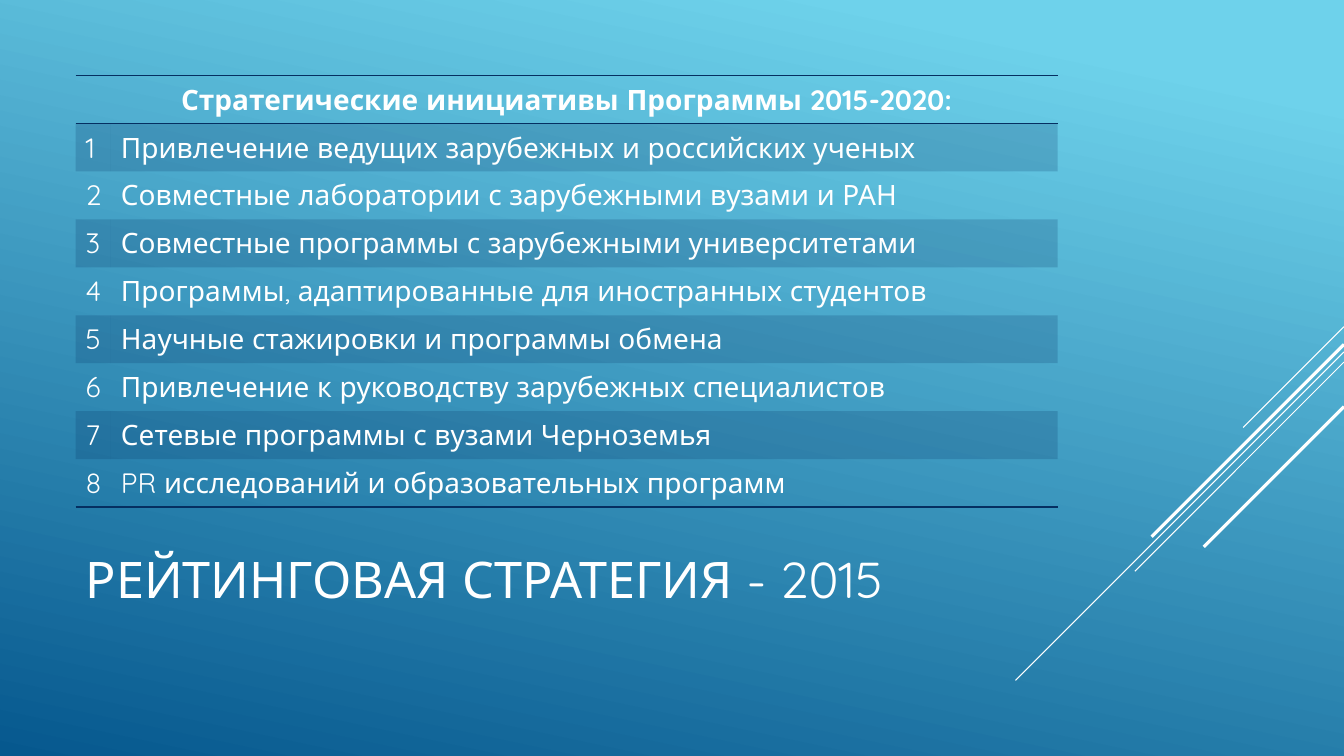
from dataclasses import dataclass

from lxml.etree import SubElement
from pptx import Presentation
from pptx.dml.color import RGBColor
from pptx.enum.shapes import MSO_CONNECTOR
from pptx.enum.text import MSO_ANCHOR, PP_ALIGN
from pptx.oxml.ns import qn
from pptx.util import Inches, Pt

COLUMNS, ROWS = 160, 90
NO_STYLE_NO_GRID = "{2D5ABB26-0587-4C30-8999-92F81FD0307C}"

TITLE = "РЕЙТИНГОВАЯ СТРАТЕГИЯ - 2015"
TABLE_HEADING = "Стратегические инициативы Программы 2015-2020:"
INITIATIVES = [
    "Привлечение ведущих зарубежных и российских ученых",
    "Совместные лаборатории с зарубежными вузами и РАН",
    "Совместные программы с зарубежными университетами",
    "Программы, адаптированные для иностранных студентов",
    "Научные стажировки и программы обмена",
    "Привлечение к руководству зарубежных специалистов",
    "Сетевые программы с вузами Черноземья",
    "PR исследований и образовательных программ",
]

# Diagonals from the right edge: starting row, run in grid units, weight
DIAGONALS = [
    (38.9, 12, 0.75),
    (41.9, 39.1, 0.75),
    (43.1, 24.9, 0.75),
    (41, 22.9, 2.25),
    (48.4, 16.7, 2.25),
]


@dataclass(frozen=True)
class Theme:
    font: str = "Quicksand"
    title_size: float = 36
    table_size: float = 20
    text: str = "FFFFFF"
    navy: str = "052F61"
    sky: str = "6ED2EB"
    deep: str = "06588E"
    band_alpha: int = 20
    rule_weight: float = 1


class SlideBuilder:
    def __init__(self, deck, theme):
        self.theme = theme
        self.page = deck.slides.add_slide(deck.slide_layouts[6])
        self.column = deck.slide_width / COLUMNS
        self.row = deck.slide_height / ROWS

    def x(self, columns):
        return round(columns * self.column)

    def y(self, rows):
        return round(rows * self.row)

    def area(self, left, top, width, height):
        return self.x(left), self.y(top), self.x(width), self.y(height)

    def background(self, angle):
        fill = self.page.background.fill
        fill.gradient()
        fill.gradient_angle = 360 - angle
        stops = [(0.1, self.theme.sky), (1, self.theme.deep)]
        for stop, (position, color) in zip(fill.gradient_stops, stops):
            stop.position = position
            stop.color.rgb = RGBColor.from_string(color)

    def diagonal(self, top, run, weight):
        line = self.page.shapes.add_connector(
            MSO_CONNECTOR.STRAIGHT,
            self.x(COLUMNS), self.y(top), self.x(COLUMNS - run), self.y(top + run),
        )
        line.line.color.rgb = RGBColor.from_string(self.theme.text)
        line.line.width = Pt(weight)
        SubElement(line._element.spPr, qn("a:effectLst"))

    def set_text(self, frame, text, size, bold=False, align=PP_ALIGN.LEFT):
        para = frame.paragraphs[0]
        para.text = text
        para.alignment = align
        para.font.name = self.theme.font
        para.font.size = Pt(size)
        para.font.bold = bold
        para.font.color.rgb = RGBColor.from_string(self.theme.text)

    def title(self, text, *area):
        box = self.page.shapes.add_textbox(*self.area(*area))
        frame = box.text_frame
        frame.word_wrap = True
        frame.vertical_anchor = MSO_ANCHOR.MIDDLE
        self.set_text(frame, text, self.theme.title_size)

    def rule(self, cell, side):
        line = SubElement(
            cell._tc.get_or_add_tcPr(), qn(f"a:ln{side}"), w=str(Pt(self.theme.rule_weight))
        )
        fill = SubElement(line, qn("a:solidFill"))
        SubElement(fill, qn("a:srgbClr"), val=self.theme.navy)

    def shade(self, cell, banded):
        if not banded:
            cell.fill.background()
            return
        cell.fill.solid()
        cell.fill.fore_color.rgb = RGBColor.from_string(self.theme.navy)
        color = cell._tc.tcPr.find(".//" + qn("a:srgbClr"))
        SubElement(color, qn("a:alpha"), val=str(self.theme.band_alpha * 1000))

    def numbered_table(self, heading, items, left, top, widths, row_height):
        count = len(items) + 1
        area = self.area(left, top, sum(widths), row_height * count)
        table = self.page.shapes.add_table(count, len(widths), *area).table
        table.first_row = table.horz_banding = False
        table._tbl.tblPr.find(qn("a:tableStyleId")).text = NO_STYLE_NO_GRID
        for column, width in zip(table.columns, widths):
            column.width = self.x(width)
        for row in table.rows:
            row.height = self.y(row_height)

        # Rules and alternate bands
        rules = {0: "TB", count - 1: "B"}
        for index, row in enumerate(table.rows):
            for cell in row.cells:
                for side in rules.get(index, ""):
                    self.rule(cell, side)
                self.shade(cell, index % 2 == 1)
                cell.vertical_anchor = MSO_ANCHOR.MIDDLE

        # Heading and numbered rows
        size = self.theme.table_size
        header = table.cell(0, 0)
        header.merge(table.cell(0, len(widths) - 1))
        self.set_text(header.text_frame, heading, size, True, PP_ALIGN.CENTER)
        for number, item in enumerate(items, 1):
            for column, text in enumerate((str(number), item)):
                self.set_text(table.cell(number, column).text_frame, text, size)


def main():
    deck = Presentation()
    deck.slide_width, deck.slide_height = Inches(13.33), Inches(7.5)
    slide = SlideBuilder(deck, Theme())

    # Backdrop
    slide.background(angle=102)
    for diagonal in DIAGONALS:
        slide.diagonal(*diagonal)

    # Content
    slide.title(TITLE, 9, 58.9, 112, 19.8)
    slide.numbered_table(TABLE_HEADING, INITIATIVES, 9, 9, (4.2, 112.7), 5.71)

    deck.save("out.pptx")


if __name__ == "__main__":
    main()
